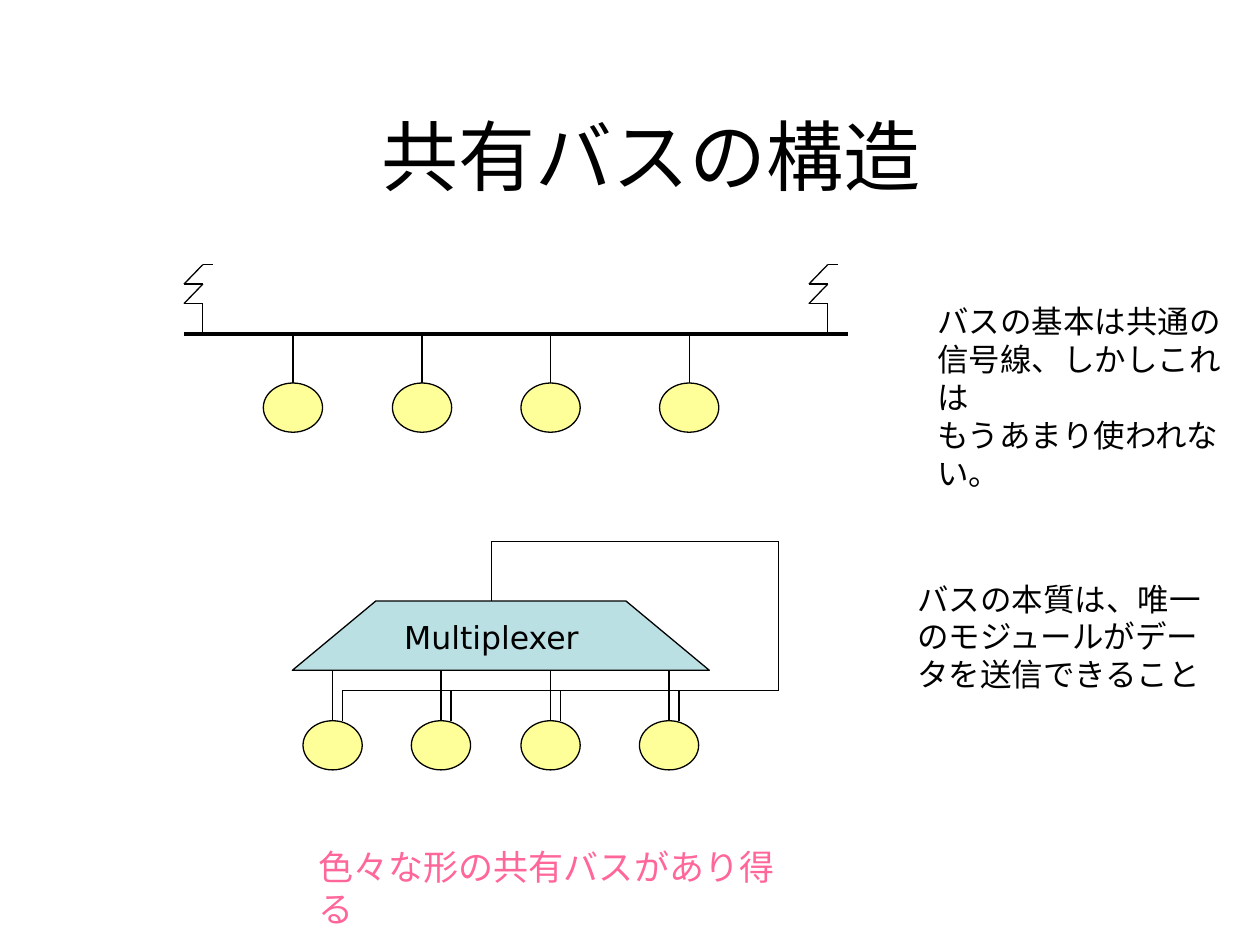
from lxml import etree
from pptx import Presentation
from pptx.dml.color import RGBColor
from pptx.enum.shapes import MSO_CONNECTOR, MSO_SHAPE
from pptx.enum.text import MSO_ANCHOR, PP_ALIGN
from pptx.oxml.ns import qn
from pptx.util import Inches, Pt

STRAIGHT = MSO_CONNECTOR.STRAIGHT
ELLIPSE = MSO_SHAPE.OVAL
MULTIPLEXER = MSO_SHAPE.FLOWCHART_MANUAL_OPERATION
TOP, MIDDLE = MSO_ANCHOR.TOP, MSO_ANCHOR.MIDDLE
LEFT, CENTER = PP_ALIGN.LEFT, PP_ALIGN.CENTER

BLACK = RGBColor(0x00, 0x00, 0x00)
YELLOW = RGBColor(0xFF, 0xFF, 0x99)
TEAL = RGBColor(0xBB, 0xE0, 0xE3)
PINK = RGBColor(0xFF, 0x66, 0x99)

COLUMNS, ROWS = 100, 75
CELL = Inches(0.1)
THIN, THICK = 0.75, 2.25
MODULE_WIDTH, MODULE_HEIGHT = 4.7, 3.9

BUS_ROW = 26.5
BUS_MODULE_ROW = 30.4
BUS_MODULES = (23.25, 33.5, 43.7, 54.7)
TERMINATORS = (14.6, 64.2)
ZIGZAG = ((2.3, 21), (1.5, 21), (0, 22.55), (1.5, 22.55), (0, 24.1), (1.5, 24.1), (1.5, BUS_ROW))

MUX_TOP, MUX_BOTTOM = 47.7, 53.2
MUX_MODULE_ROW = 57.2
MUX_MODULES = (26.4, 35, 43.7, 53.1)
RETURN_OFFSET = 0.8
RETURN_ROW = 54.8


def grid(*cells):
    return [round(cell * CELL) for cell in cells]


def add_wire(slide, start, end, width=THIN):
    wire = slide.shapes.add_connector(STRAIGHT, *grid(*start, *end))
    wire.line.color.rgb = BLACK
    wire.line.width = Pt(width)
    etree.SubElement(wire._element.spPr, qn("a:effectLst"))
    return wire


def add_path(slide, points):
    for start, end in zip(points, points[1:]):
        add_wire(slide, start, end)


def add_block(slide, kind, area, color):
    block = slide.shapes.add_shape(kind, *grid(*area))
    block.shadow.inherit = False
    block.fill.solid()
    block.fill.fore_color.rgb = color
    block.line.color.rgb = BLACK
    block.line.width = Pt(THIN)
    return block


def add_module(slide, center, row, wire_row):
    area = (center - MODULE_WIDTH / 2, row, MODULE_WIDTH, MODULE_HEIGHT)
    module = add_block(slide, ELLIPSE, area, YELLOW)
    tap = add_wire(slide, (center, row), (center, wire_row))
    tap.begin_connect(module, 0)


def add_text(slide, area, lines, size, color=BLACK, font="DejaVu Sans", align=LEFT, anchor=TOP):
    frame = slide.shapes.add_textbox(*grid(*area)).text_frame
    frame.word_wrap = True
    frame.vertical_anchor = anchor
    frame.text = "\n".join(lines)
    for paragraph in frame.paragraphs:
        paragraph.alignment = align
        paragraph.font.name = font
        paragraph.font.size = Pt(size)
        paragraph.font.color.rgb = color


def add_shared_line_bus(slide):
    add_wire(slide, (14.6, BUS_ROW), (67.3, BUS_ROW), THICK)
    for left in TERMINATORS:
        zigzag = [(left + column, row) for column, row in ZIGZAG]
        add_path(slide, zigzag)
    for center in BUS_MODULES:
        add_module(slide, center, BUS_MODULE_ROW, BUS_ROW)


def add_multiplexer_bus(slide):
    for center in MUX_MODULES:
        add_module(slide, center, MUX_MODULE_ROW, MUX_BOTTOM)
    mux = add_block(slide, MULTIPLEXER, (23.2, MUX_TOP, 33.1, MUX_BOTTOM - MUX_TOP), TEAL)
    mux.rotation = 180
    returns = [center + RETURN_OFFSET for center in MUX_MODULES]
    add_path(slide, [(39, MUX_TOP), (39, 43), (61.8, 43), (61.8, RETURN_ROW), (returns[0], RETURN_ROW)])
    for column in returns:
        add_wire(slide, (column, RETURN_ROW), (column, MUX_MODULE_ROW))
    add_text(slide, (31.1, 48.6, 15.9, 4), ["Multiplexer"], 18)


def main():
    deck = Presentation()
    deck.slide_width, deck.slide_height = grid(COLUMNS, ROWS)
    slide = deck.slides.add_slide(deck.slide_layouts[6])
    add_text(slide, (6.7, 6, 90, 12.5), ["共有バスの構造"], 44, font="Arial", align=CENTER, anchor=MIDDLE)
    add_shared_line_bus(slide)
    add_multiplexer_bus(slide)
    bus_note = ["バスの基本は共通の", "信号線、しかしこれは", "もうあまり使われない。"]
    add_text(slide, (73.4, 23.5, 26.3, 10.1), bus_note, 18)
    add_text(slide, (71.8, 45.5, 24.6, 10.1), ["バスの本質は、唯一のモジュールがデータを送信できること"], 18)
    add_text(slide, (24.3, 66.6, 39.5, 4.4), ["色々な形の共有バスがあり得る"], 20, PINK)
    deck.save("out.pptx")


if __name__ == "__main__":
    main()
